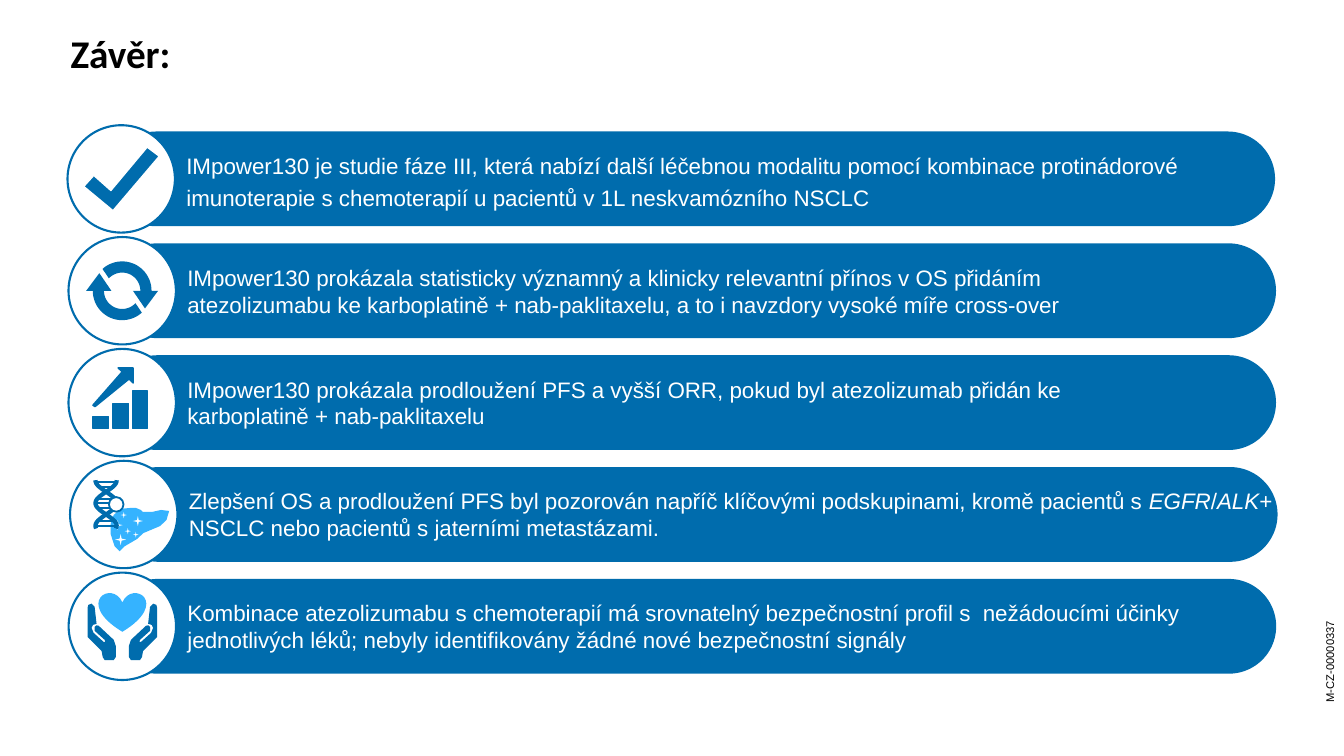
from math import cos, pi, radians, sin

from lxml.etree import SubElement
from pptx import Presentation
from pptx.dml.color import RGBColor
from pptx.enum.shapes import MSO_CONNECTOR, MSO_SHAPE
from pptx.enum.text import MSO_ANCHOR, PP_ALIGN
from pptx.oxml.ns import qn
from pptx.util import Pt

BLUE, SKY, WHITE, BLACK = "006CAD", "35B3FF", "FFFFFF", "000000"
ROW_PITCH, FIRST_ROW_Y = 79.9, 127.8
BADGE_SIZE, BAR_WIDTH, BAR_HEIGHT = 76.7, 833, 67.7


def color(hex_string):
    return RGBColor.from_string(hex_string)


class SlideArtist:
    """Draws in points around a movable centre."""

    def __init__(self, slide):
        self.shapes = slide.shapes
        self.cx = self.cy = 0

    def paint(self, shape, fill, line, line_width):
        shape.shadow.inherit = False
        if fill:
            shape.fill.solid()
            shape.fill.fore_color.rgb = color(fill)
        else:
            shape.fill.background()
        if line:
            shape.line.color.rgb = color(line)
            shape.line.width = Pt(line_width)
        else:
            shape.line.fill.background()
        return shape

    def preset(self, kind, x, y, width, height, fill, line=None, line_width=1):
        shape = self.shapes.add_shape(kind, Pt(self.cx + x), Pt(self.cy + y), Pt(width), Pt(height))
        return self.paint(shape, fill, line, line_width)

    def centred(self, kind, x, y, size, fill, line=None, line_width=1):
        return self.preset(kind, x - size / 2, y - size / 2, size, size, fill, line, line_width)

    def outline(self, points, fill, line=None, line_width=1):
        placed = [((self.cx + x) * 100, (self.cy + y) * 100) for x, y in points]
        builder = self.shapes.build_freeform(*placed[0], scale=Pt(1) / 100)
        builder.add_line_segments(placed[1:], close=bool(fill))
        return self.paint(builder.convert_to_shape(), fill, line, line_width)

    def rung(self, x1, x2, y):
        rung = self.shapes.add_connector(
            MSO_CONNECTOR.STRAIGHT,
            Pt(self.cx + x1), Pt(self.cy + y), Pt(self.cx + x2), Pt(self.cy + y))
        rung.line.color.rgb = color(BLUE)
        rung.line.width = Pt(1.6)
        SubElement(rung._element.spPr, qn("a:effectLst"))

    def set_text(self, shape, text, size, ink, font="Arial", bold=False, italics=(), spacing=None):
        frame = shape.text_frame
        frame.vertical_anchor = MSO_ANCHOR.MIDDLE
        frame.text = text
        for paragraph in frame.paragraphs:
            paragraph.alignment = PP_ALIGN.LEFT
            if spacing:
                paragraph.line_spacing = spacing
            if italics:
                self.split_italics(paragraph, italics)
            for run in paragraph.runs:
                run.font.name, run.font.size, run.font.bold = font, Pt(size), bold
                run.font.color.rgb = color(ink)
        return frame

    def split_italics(self, paragraph, words):
        pieces = [paragraph.text]
        for word in words:
            before, after = pieces.pop().split(word, 1)
            pieces += [before, word, after]
        paragraph.clear()
        for piece in pieces:
            for index, part in enumerate(piece.split("\v")):
                if index:
                    paragraph.add_line_break()
                run = paragraph.add_run()
                run.text = part
                run.font.italic = piece in words

    def label(self, text, x, y, width, height, size, font="Arial", bold=False):
        box = self.shapes.add_textbox(Pt(x), Pt(y), Pt(width), Pt(height))
        self.set_text(box, text, size, BLACK, font, bold)
        return box

    def conclusion(self, text, cx, cy, italics, spacing):
        self.cx, self.cy = cx, cy
        bar = self.preset(MSO_SHAPE.ROUNDED_RECTANGLE, -8.8, -BAR_HEIGHT / 2, BAR_WIDTH, BAR_HEIGHT, BLUE)
        bar.adjustments[0] = 0.5
        frame = self.set_text(bar, text, 16, WHITE, italics=italics, spacing=spacing)
        frame.word_wrap = False
        frame.margin_left = Pt(45.4)
        frame.margin_right = frame.margin_top = frame.margin_bottom = 0
        self.centred(MSO_SHAPE.OVAL, 0, 0, BADGE_SIZE, WHITE, BLUE, 1.5)


def arc(radius, start, end, steps=24):
    angles = [radians(start + (end - start) * i / steps) for i in range(steps + 1)]
    return [(radius * cos(a), radius * sin(a)) for a in angles]


# Badge icons
def check_icon(artist):
    artist.outline([(18.5, -22.7), (-7.4, 8.3), (-19.6, -2.5), (-26.8, 5.4), (-5.9, 22.7),
                    (27.2, -16.2)], BLUE, WHITE)


def cycle_icon(artist):
    head = [(25.7, 0), (16.3, 12.6), (7.7, 0)]
    arrow = arc(21, 228, 360) + head + arc(13, 360, 223)
    for turn in (1, -1):
        artist.outline([(turn * x, turn * y) for x, y in arrow], BLUE)


def growth_icon(artist):
    for left, top in ((-20.9, 9.7), (-6.5, 0.4), (7.2, -8.3)):
        artist.preset(MSO_SHAPE.RECTANGLE, left, top, 11, 18.4 - top, BLUE, BLUE)
    artist.outline([(7.9, -24.8), (-2.9, -24.8), (0, -22), (-20.9, 1.8), (-19.4, 2.9),
                    (5, -16.9), (7.9, -14)], BLUE, BLUE)


def liver_dna_icon(artist):
    artist.outline([(5, -4.7), (8.6, -4.7), (12.2, -3.2), (13.7, -1.8), (20.2, -1.8), (26.6, -3.2),
                    (32.4, -2.5), (30.5, 4), (25.9, 8.3), (14, 13.3), (9.4, 17.6), (0.7, 22.7),
                    (-2.9, 26.3), (-6.5, 22.7), (-9.4, 14), (-9.4, 6.8), (-7.2, 0.4), (-2.2, -4)], SKY)
    for x, y, size in ((-2.2, 18, 8), (8.6, 14.4, 4), (2.9, 11.9, 4.4),
                       (-4.3, 7.6, 7.2), (10.1, 4.7, 7.2), (0, 0.4, 4.4)):
        artist.centred(MSO_SHAPE.STAR_4_POINT, x, y, size, WHITE)
    helix_x, half_turn = -12.6, 16.2

    def swing(y):
        return 7.6 * sin(pi * (y + half_turn) / half_turn)

    heights = [-24.5 + 34.5 * i / 30 for i in range(31)]
    for side in (1, -1):
        artist.outline([(helix_x + side * swing(y), y) for y in heights], None, BLUE, 3)
    for y in (-23, -19.4, -10.8, -8, -4.4, 4.7, 8.3):
        artist.rung(helix_x - swing(y), helix_x + swing(y), y)
    artist.centred(MSO_SHAPE.OVAL, -5.4, -7.2, 10.4, WHITE, BLUE, 1.3)


def care_icon(artist):
    artist.preset(MSO_SHAPE.HEART, -17, -24.1, 34, 28, SKY)
    hand = [(18.4, -1.8), (19.8, -14), (22, -16.2), (24.3, -15.3), (24.8, -13.3), (24.8, 7.6),
            (23.4, 9), (17.6, 14.8), (14.8, 17.6), (14, 22), (12.6, 24.1), (6.1, 24.1), (4.7, 22),
            (4.7, 14), (6.1, 9.7), (16.9, -0.4), (18.6, -0.7), (19.8, 0.4), (19.8, 3.2),
            (12.6, 9.7), (12.2, 11), (13.3, 11.2), (20.5, 4.7), (22, 1.1), (21, -1)]
    for side in (1, -1):
        artist.outline([(side * x, y) for x, y in hand], BLUE)


CONCLUSIONS = [
    ("IMpower130 je studie fáze III, která nabízí další léčebnou modalitu pomocí kombinace protinádorové\n"
     "imunoterapie s chemoterapií u pacientů v 1L neskvamózního NSCLC", 86.6, check_icon, (), 1.2),
    ("IMpower130 prokázala statisticky významný a klinicky relevantní přínos v OS přidáním\n"
     "atezolizumabu ke karboplatině + nab-paklitaxelu, a to i navzdory vysoké míře cross-over",
     87.3, cycle_icon, (), None),
    ("IMpower130 prokázala prodloužení PFS a vyšší ORR, pokud byl atezolizumab přidán ke\n"
     "karboplatině + nab-paklitaxelu", 87.3, growth_icon, (), None),
    ("Zlepšení OS a prodloužení PFS byl pozorován napříč klíčovými podskupinami, kromě pacientů s "
     "EGFR/ALK+ \vNSCLC nebo pacientů s jaterními metastázami.",
     88.4, liver_dna_icon, ("EGFR", "ALK"), None),
    ("Kombinace atezolizumabu s chemoterapií má srovnatelný bezpečnostní profil s  nežádoucími účinky\n"
     "jednotlivých léků; nebyly identifikovány žádné nové bezpečnostní signály",
     87.4, care_icon, (), None),
]


def main():
    deck = Presentation()
    deck.slide_width, deck.slide_height = Pt(960), Pt(540)
    artist = SlideArtist(deck.slides.add_slide(deck.slide_layouts[6]))

    # Heading and approval code
    heading = artist.label("Závěr:", 50.4, 5, 862, 65.5, 28, "Calibri", True).text_frame
    heading.word_wrap = True
    heading.margin_left = heading.margin_right = heading.margin_top = heading.margin_bottom = 0
    approval_code = artist.label("M-CZ-00000337", 913, 463.7, 73.4, 17.3, 8)
    approval_code.text_frame.word_wrap = False
    approval_code.rotation = 270

    # Conclusion rows
    for row, (text, cx, icon, italics, spacing) in enumerate(CONCLUSIONS):
        artist.conclusion(text, cx, FIRST_ROW_Y + row * ROW_PITCH, italics, spacing)
        icon(artist)

    deck.save("out.pptx")


if __name__ == "__main__":
    main()
